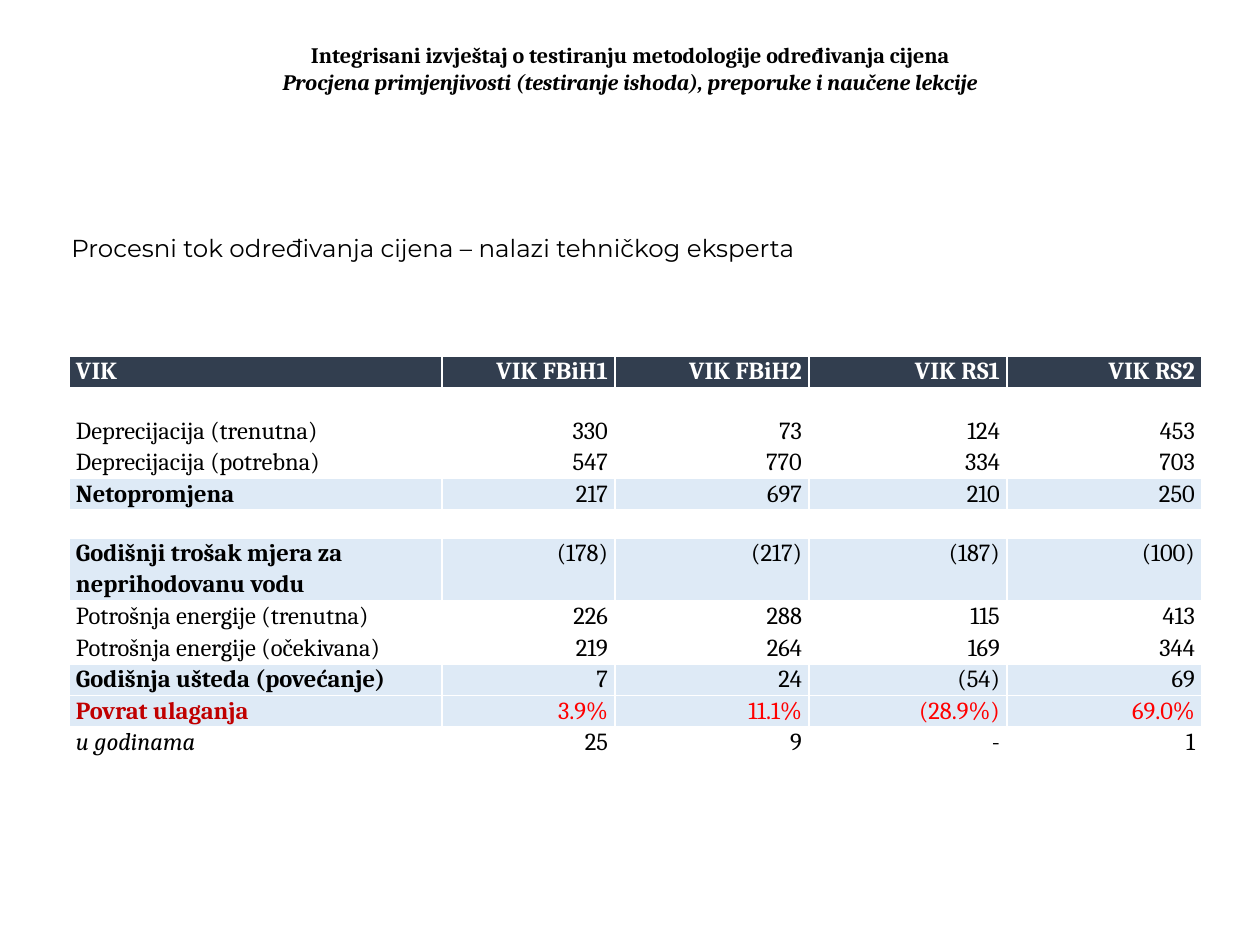
from lxml import etree
from pptx import Presentation
from pptx import util as u
from pptx.dml import color
from pptx.enum import text
from pptx.oxml import ns

PX = u.Inches(1) // 126
COLORS = {"ink": "000000", "white": "FFFFFF", "header": "323E4F", "band": "DEEAF6",
          "return": "C00000", "rate": "FF0000"}
ALIGN = {"left": text.PP_ALIGN.LEFT, "center": text.PP_ALIGN.CENTER, "right": text.PP_ALIGN.RIGHT}


def rgb(name):
    return color.RGBColor.from_string(COLORS[name])


def write(paragraph, words, size=14, font="Cambria", ink="ink", bold=False, italic=False,
          align="left", spacing=None):
    paragraph.alignment = ALIGN[align]
    paragraph.line_spacing = spacing
    run = paragraph.add_run()
    run.text = words
    run.font.size, run.font.name = u.Pt(size), font
    run.font.bold, run.font.italic = bold, italic
    run.font.color.rgb = rgb(ink)


class Deck:
    """Holds the slide style and draws each kind of element on the current slide."""

    def __init__(self, width, height):
        self.deck = Presentation()
        self.deck.slide_width, self.deck.slide_height = width * PX, height * PX
        self.slide = self.deck.slides.add_slide(self.deck.slide_layouts[6])

    def text_box(self, left, top, width, height, anchor=text.MSO_ANCHOR.TOP):
        frame = self.slide.shapes.add_textbox(left * PX, top * PX, width * PX, height * PX).text_frame
        frame.word_wrap = True
        frame.vertical_anchor = anchor
        return frame.paragraphs[0]

    def table(self, left, top, widths, heights):
        grid = self.slide.shapes.add_table(
            len(heights), len(widths), left * PX, top * PX, sum(widths) * PX, sum(heights) * PX).table
        grid.first_row = grid.horz_banding = False
        for column, width in zip(grid.columns, widths):
            column.width = width * PX
        for row, height in zip(grid.rows, heights):
            row.height = height * PX
        return grid

    def cell(self, cell, words, fill=None, **style):
        cell.margin_left = cell.margin_right = 7 * PX
        cell.margin_top = cell.margin_bottom = 0
        if fill:
            cell.fill.solid()
            cell.fill.fore_color.rgb = rgb(fill)
        else:
            cell.fill.background()
        paragraph = cell.text_frame.paragraphs[0]
        if words:
            write(paragraph, words, spacing=1.07, **style)
        else:
            etree.SubElement(paragraph._p, ns.qn("a:endParaRPr"), sz="1000")


HEADER = dict(fill="header", ink="white", bold=True)
BAND = dict(fill="band")
RATE = dict(fill="band", ink="rate")
ROWS = [
    (["VIK", "VIK FBiH1", "VIK FBiH2", "VIK RS1", "VIK RS2"], HEADER, {}),
    ([""] * 5, {}, {}),
    (["Deprecijacija (trenutna)", "330", "73", "124", "453"], {}, {}),
    (["Deprecijacija (potrebna)", "547", "770", "334", "703"], {}, {}),
    (["Netopromjena", "217", "697", "210", "250"], BAND, dict(bold=True)),
    ([""] * 5, {}, {}),
    (["Godišnji trošak mjera za neprihodovanu vodu", "(178)", "(217)", "(187)", "(100)"],
     BAND, dict(bold=True)),
    (["Potrošnja energije (trenutna)", "226", "288", "115", "413"], {}, {}),
    (["Potrošnja energije (očekivana)", "219", "264", "169", "344"], {}, {}),
    (["Godišnja ušteda (povećanje)", "7", "24", "(54)", "69"], BAND, dict(bold=True)),
    (["Povrat ulaganja", "3.9%", "11.1%", "(28.9%)", "69.0%"], RATE, dict(ink="return", bold=True)),
    (["u godinama", "25", "9", "-", "1"], {}, dict(italic=True)),
]


def main():
    deck = Deck(1260, 945)

    title = deck.text_box(63, 38, 1134, 60, text.MSO_ANCHOR.MIDDLE)
    write(title, "Integrisani izvještaj o testiranju metodologije određivanja cijena",
          size=12.6, bold=True, align="center")
    title.add_line_break()
    write(title, "Procjena primjenjivosti (testiranje ishoda), preporuke i naučene lekcije",
          size=12.6, bold=True, italic=True, align="center")

    subtitle = deck.text_box(59, 227, 1131, 650)
    write(subtitle, "Procesni tok određivanja cijena – nalazi tehničkog eksperta", font="Montserrat")

    heights = [30, 28, 30, 30, 30, 28, 60, 30, 30, 30, 30, 30]
    results = deck.table(69, 356, [373, 173, 194, 198, 195], heights)
    for r, (words, row_style, label_style) in enumerate(ROWS):
        for c, word in enumerate(words):
            style = row_style | (dict(label_style, align="left") if c == 0 else dict(align="right"))
            deck.cell(results.cell(r, c), word, **style)

    deck.deck.save("out.pptx")


if __name__ == "__main__":
    main()
